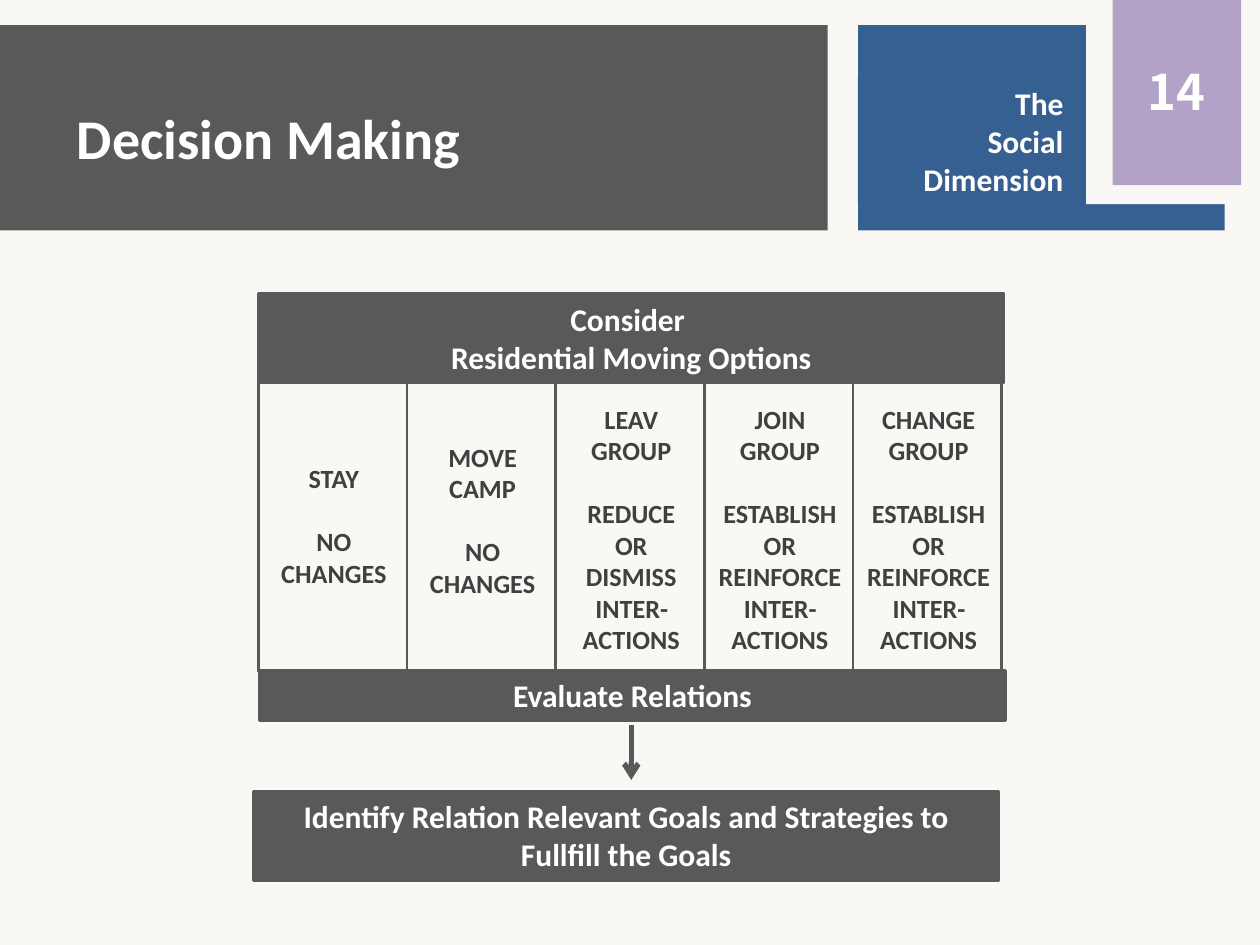
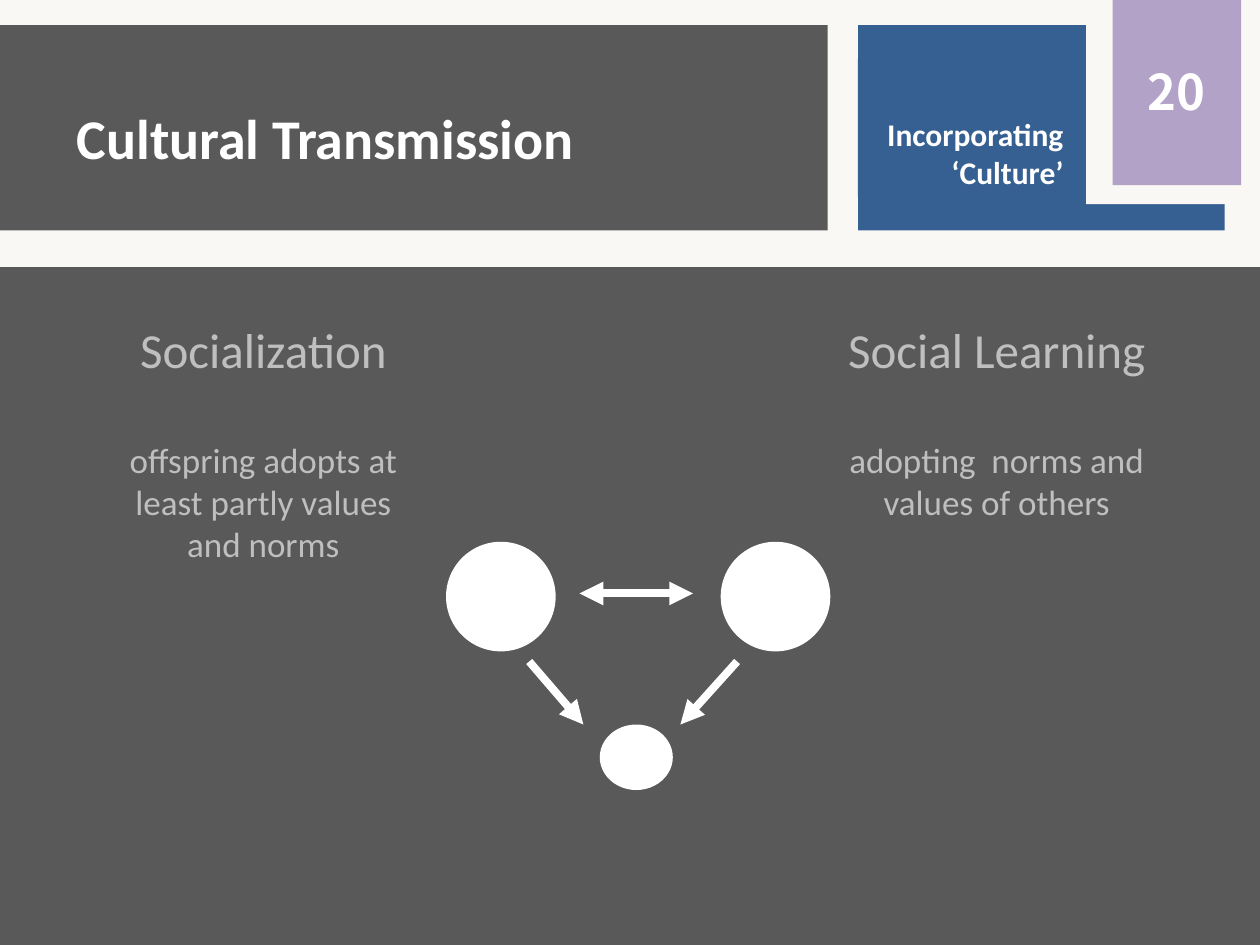
from dataclasses import dataclass

from lxml.etree import SubElement
from pptx import Presentation
from pptx.dml.color import RGBColor
from pptx.enum.shapes import MSO_CONNECTOR as Connector, MSO_SHAPE as Shape
from pptx.enum.text import MSO_ANCHOR as Anchor, PP_ALIGN as Align
from pptx.oxml.ns import qn
from pptx.util import Inches, Pt

CREAM = RGBColor(0xF9, 0xF8, 0xF5)
GRAY = RGBColor(0x59, 0x59, 0x59)
DARK = RGBColor(0x40, 0x40, 0x40)
SILVER = RGBColor(0xBF, 0xBF, 0xBF)
BLUE = RGBColor(0x37, 0x60, 0x92)
PURPLE = RGBColor(0xB3, 0xA2, 0xC7)
WHITE = RGBColor(0xFF, 0xFF, 0xFF)

FONT = "Calibri"
NUMBER_FONT = "Noto Sans CJK SC"
TITLE_ONLY = 5
LINE_HEIGHT = 1.22


@dataclass
class Option:
    """One moving option: its name, its effect and the top of its text."""
    name: str
    effect: str
    top: float


@dataclass
class Arrow:
    start: tuple[float, float]
    end: tuple[float, float]
    head: str = ""
    tail: str = ""


@dataclass
class Concept:
    left: float
    name: str
    meaning: str


OPTIONS = [
    Option("STAY", "NO CHANGES", 3.62),
    Option("MOVE\nCAMP", "NO CHANGES", 3.45),
    Option("LEAV\nGROUP", "REDUCE OR DISMISS INTER-ACTIONS", 3.15),
    Option("JOIN GROUP", "ESTABLISH OR REINFORCE\nINTER-ACTIONS", 3.15),
    Option("CHANGE GROUP", "ESTABLISH OR REINFORCE\nINTER-ACTIONS", 3.15),
]
CONCEPTS = [
    Concept(0.75, "Socialization",
            "offspring adopts at least partly values and norms"),
    Concept(6.57, "Social Learning", "adopting  norms and values of others"),
]
TRANSMISSIONS = [
    Arrow((4.6, 4.71), (5.5, 4.71), head="triangle", tail="triangle"),
    Arrow((5.85, 5.25), (5.4, 5.75), tail="triangle"),
    Arrow((4.2, 5.25), (4.63, 5.75), tail="triangle"),
]


def write(frame, *texts: str, sizes: tuple[int, ...] = (18,),
          color: RGBColor = WHITE, bold: bool = True, font: str = FONT,
          align: Align = Align.CENTER, anchor: Anchor = Anchor.TOP) -> None:
    """Fill a frame with paragraphs, set one line of the first size apart."""
    frame.word_wrap = True
    frame.vertical_anchor = anchor
    for index, text in enumerate(texts):
        para = frame.add_paragraph() if index else frame.paragraphs[0]
        para.alignment = align
        if index:
            para.space_before = Pt(round(sizes[0] * LINE_HEIGHT))
        para.text = text.replace("\n", "\v")
        for span in para.runs:
            span.font.name = font
            span.font.size = Pt(sizes[min(index, len(sizes) - 1)])
            span.font.bold = bold
            span.font.color.rgb = color


def add_box(page, left: float, top: float, width: float, height: float,
            fill: RGBColor | None = None, line: RGBColor | None = None,
            kind: Shape = Shape.RECTANGLE):
    box = page.shapes.add_shape(kind, Inches(left), Inches(top),
                                Inches(width), Inches(height))
    box.shadow.inherit = False
    if fill is None:
        box.fill.background()
    else:
        box.fill.solid()
        box.fill.fore_color.rgb = fill
    if line is None:
        box.line.fill.background()
    else:
        box.line.color.rgb = line
        box.line.width = Pt(1.5)
    return box


def add_text(page, left: float, top: float, width: float, height: float,
             *texts: str, **style) -> None:
    box = page.shapes.add_textbox(Inches(left), Inches(top),
                                  Inches(width), Inches(height))
    write(box.text_frame, *texts, **style)


def add_arrow(page, arrow: Arrow, color: RGBColor, weight: float) -> None:
    line = page.shapes.add_connector(
        Connector.STRAIGHT, *map(Inches, arrow.start + arrow.end))
    line.line.color.rgb = color
    line.line.width = Pt(weight)
    outline = line.line._get_or_add_ln()
    for tag, kind in (("a:headEnd", arrow.head), ("a:tailEnd", arrow.tail)):
        if kind:
            SubElement(outline, qn(tag), type=kind)
    SubElement(line.element.spPr, qn("a:effectLst"))


def add_page(deck, title: str, section: str, number: int,
             label_top: float, label_height: float):
    """Add a slide with its title band, section label and number tab."""
    page = deck.slides.add_slide(deck.slide_layouts[TITLE_ONLY])
    page.background.fill.solid()
    page.background.fill.fore_color.rgb = CREAM

    add_box(page, 0, 0.2, 6.57, 1.63, GRAY)
    heading = page.shapes.title
    heading.left, heading.top = Inches(0.51), Inches(0.28)
    heading.width, heading.height = Inches(8.5), Inches(1.61)
    write(heading.text_frame, title, sizes=(32,), align=Align.LEFT,
          anchor=Anchor.MIDDLE)
    heading.element.getparent().append(heading.element)

    add_box(page, 6.81, 0.2, 2.91, 1.63, BLUE)
    add_box(page, 8.62, 0, 1.38, 1.62, CREAM)
    tab = add_box(page, 8.83, -0.03, 1.02, 1.5, PURPLE)
    write(tab.text_frame, str(number), sizes=(28,), font=NUMBER_FONT,
          anchor=Anchor.MIDDLE)
    label = add_box(page, 6.81, label_top, 1.73, label_height, BLUE)
    write(label.text_frame, section, align=Align.RIGHT, anchor=Anchor.BOTTOM)
    return page


def add_decision_page(deck) -> None:
    page = add_page(deck, "Decision Making", "The\nSocial\nDimension", 14,
                    0.61, 1.01)
    left, step = 2.05, 1.18
    bars = [
        (left, 2.33, 0.71, "Consider \nResidential Moving Options"),
        (2.06, 5.32, 0.4, "Evaluate Relations"),
        (2.01, 6.28, 0.71, "Identify Relation Relevant Goals and Strategies "
                           "to Fullfill the Goals"),
    ]
    for bar_left, top, height, text in bars:
        bar = add_box(page, bar_left, top, 5.92, height, GRAY, GRAY)
        write(bar.text_frame, text)
    for index, option in enumerate(OPTIONS):
        column = left + index * step
        add_box(page, column, 3.04, step, 2.29, line=GRAY)
        add_text(page, column + 0.01, option.top, step, 5.33 - option.top,
                 option.name, option.effect, sizes=(15,), color=DARK)
    add_arrow(page, Arrow((5.01, 5.75), (5.01, 6.19), tail="arrow"), GRAY, 3)


def add_transmission_page(deck) -> None:
    page = add_page(deck, "Cultural Transmission",
                    "Incorporating\n‘Culture’", 20, 0.47, 1.09)
    add_box(page, 0, 2.12, 10, 5.38, GRAY)
    for concept in CONCEPTS:
        add_text(page, concept.left, 2.49, 2.68, 2.05, concept.name,
                 concept.meaning, sizes=(28, 20), color=SILVER, bold=False)
    for left, top, width, height in [(3.54, 4.3, 0.87, 0.87),
                                     (5.72, 4.3, 0.87, 0.87),
                                     (4.76, 5.75, 0.58, 0.52)]:
        add_box(page, left, top, width, height, WHITE, kind=Shape.OVAL)
    for arrow in TRANSMISSIONS:
        add_arrow(page, arrow, WHITE, 4.5)


def main() -> None:
    deck = Presentation()
    deck.slide_width, deck.slide_height = Inches(10), Inches(7.5)
    add_decision_page(deck)
    add_transmission_page(deck)
    deck.save("out.pptx")


if __name__ == "__main__":
    main()
